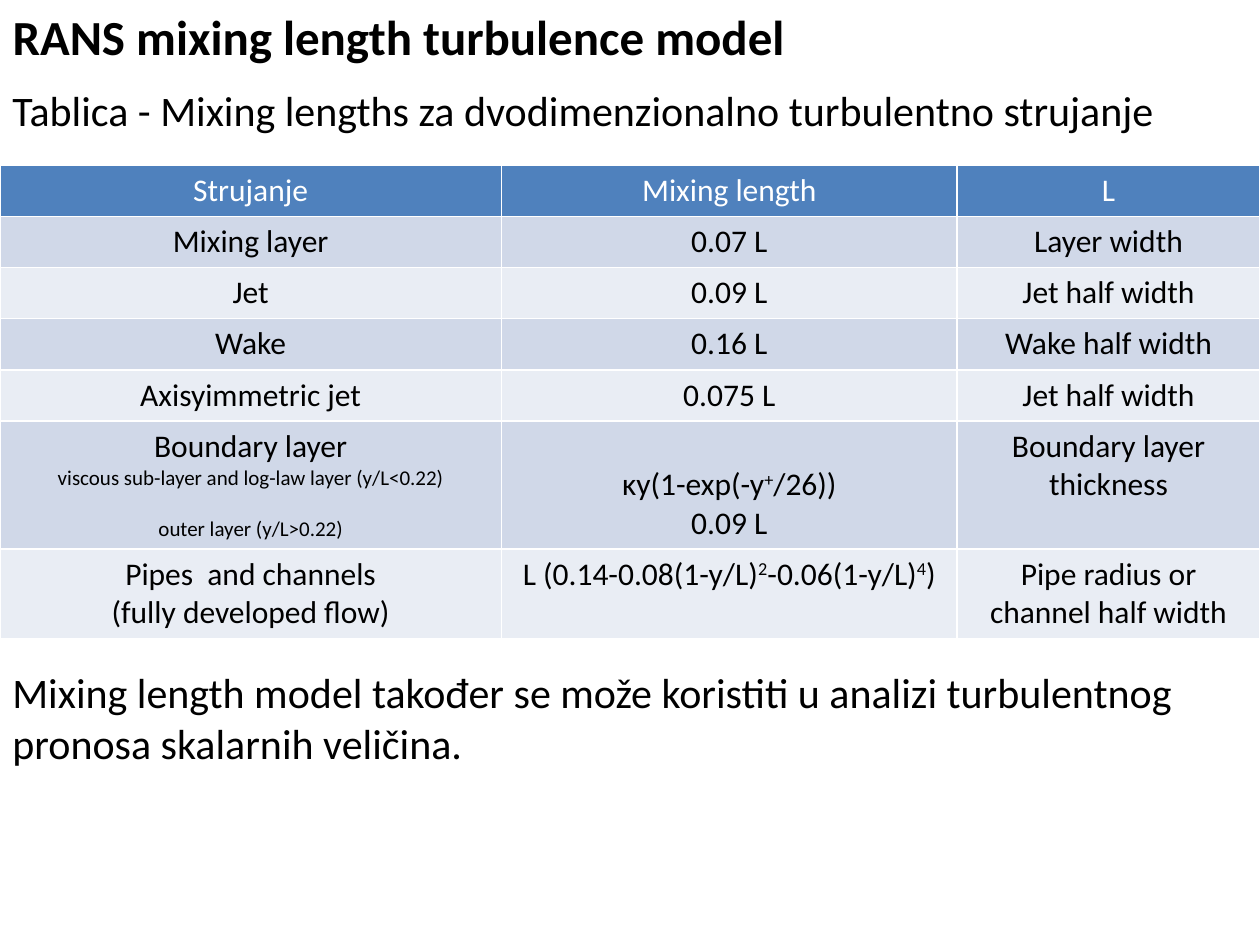
"""Build a slide with a table of mixing lengths for two-dimensional turbulent flow."""
import pptx
import pptx.util
import pptx.dml.color
import pptx.enum.text

Pt = pptx.util.Pt
RGBColor = pptx.dml.color.RGBColor
ALIGN = pptx.enum.text.PP_ALIGN
ANCHOR = pptx.enum.text.MSO_ANCHOR
FIT = pptx.enum.text.MSO_AUTO_SIZE

BLACK = RGBColor(0x00, 0x00, 0x00)
WHITE = RGBColor(0xFF, 0xFF, 0xFF)
BLUE = RGBColor(0x4F, 0x81, 0xBD)
BANDS = [RGBColor(0xE9, 0xED, 0xF4), RGBColor(0xD0, 0xD8, 0xE8)]

TITLE = "RANS mixing length turbulence model"
INTRO = "Tablica - Mixing lengths za dvodimenzionalno turbulentno strujanje"
CLOSE = ("Mixing length model također se može koristiti u analizi "
         "turbulentnog pronosa skalarnih veličina.")
ROWS = [
    ("Strujanje", "Mixing length", "L"),
    ("Mixing layer", "0.07 L", "Layer width"),
    ("Jet", "0.09 L", "Jet half width"),
    ("Wake", "0.16 L", "Wake half width"),
    ("Axisyimmetric jet", "0.075 L", "Jet half width"),
    ("Boundary layer", "κy(1-exp(-y^+^/26))\n0.09 L", "Boundary layer thickness"),
    ("Pipes  and channels\n(fully developed flow)",
     "L (0.14-0.08(1-y/L)^2^-0.06(1-y/L)^4^)",
     "Pipe radius or channel half width"),
]
ZONES = ["viscous sub-layer and log-law layer (y/L<0.22)", "outer layer (y/L>0.22)"]
LAYER = 5
WIDTHS = [286.5, 260.5, 173]
HEIGHTS = [29] * 5 + [72.5, 50]
WIDE = 720


def write(frame, text, size=18, color=BLACK, bold=False, align=ALIGN.LEFT,
          before=0, more=False):
    """Write lines of text, raising whatever stands between carets."""
    for num, line in enumerate(text.split("\n")):
        para = frame.add_paragraph() if more or num else frame.paragraphs[0]
        para.alignment = align
        para.space_before = Pt(before)
        for turn, part in enumerate(line.split("^")):
            run = para.add_run()
            run.text = part
            font = run.font
            font.name, font.size, font.bold = "Calibri", Pt(size), bold
            font.color.rgb = color
            if turn % 2:
                run._r.get_or_add_rPr().set("baseline", "30000")


def place(shape, top, high):
    """Set a full-width text shape and return its frame."""
    shape.left, shape.top, shape.width, shape.height = Pt(0), Pt(top), Pt(WIDE), Pt(high)
    frame = shape.text_frame
    frame.word_wrap = True
    frame.auto_size = FIT.NONE
    frame.vertical_anchor = ANCHOR.TOP
    return frame


def main():
    """Lay out the slide and save it."""
    deck = pptx.Presentation()
    deck.slide_width, deck.slide_height = Pt(WIDE), Pt(540)
    slide = deck.slides.add_slide(deck.slide_layouts[5])
    write(place(slide.shapes.title, 0, 41), TITLE, size=28, bold=True)
    for text, top, high in [(INTRO, 44.6, 37), (CLOSE, 377.6, 66)]:
        box = slide.shapes.add_textbox(0, 0, 0, 0)
        write(place(box, top, high), text, size=24)

    grid = slide.shapes.add_table(len(ROWS), len(WIDTHS), Pt(0), Pt(94.5),
                                  Pt(WIDE), Pt(sum(HEIGHTS))).table
    for col, wide in zip(grid.columns, WIDTHS):
        col.width = Pt(wide)
    for num, (row, high) in enumerate(zip(ROWS, HEIGHTS)):
        grid.rows[num].height = Pt(high)
        for col, text in enumerate(row):
            cell = grid.cell(num, col)
            cell.fill.solid()
            cell.fill.fore_color.rgb = BANDS[num % 2] if num else BLUE
            write(cell.text_frame, text, color=BLACK if num else WHITE,
                  align=ALIGN.CENTER)

    for zone, gap in zip(ZONES, [0, 14.6]):
        write(grid.cell(LAYER, 0).text_frame, zone, size=12, align=ALIGN.CENTER,
              before=gap, more=True)
    grid.cell(LAYER, 1).margin_top = Pt(25.6)
    deck.save("out.pptx")


if __name__ == "__main__":
    main()
